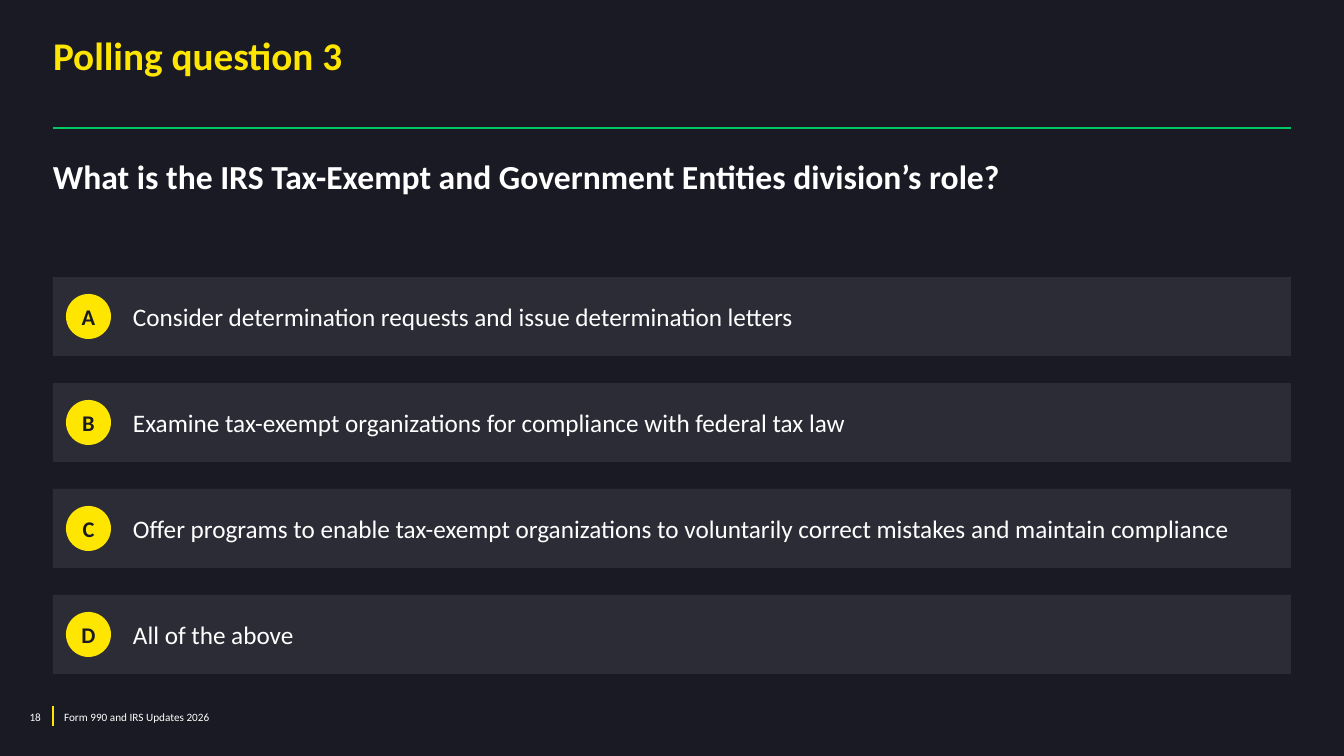
from lxml import etree
from pptx import Presentation
from pptx.dml.color import RGBColor
from pptx.enum.shapes import MSO_CONNECTOR, MSO_SHAPE
from pptx.enum.text import MSO_ANCHOR, PP_ALIGN
from pptx.oxml.ns import qn
from pptx.util import Pt

RECT, OVAL = MSO_SHAPE.RECTANGLE, MSO_SHAPE.OVAL
LINE = MSO_CONNECTOR.STRAIGHT
TOP, MIDDLE = MSO_ANCHOR.TOP, MSO_ANCHOR.MIDDLE
LEFT, CENTER, RIGHT = PP_ALIGN.LEFT, PP_ALIGN.CENTER, PP_ALIGN.RIGHT
PX = 12192000 / 1344
DARK, YELLOW, GREEN, GREY, WHITE = "1A1A24", "FFE600", "00C864", "747480", "FFFFFF"
hue = RGBColor.from_string


def write(shape, text, size=18, color=WHITE, bold=False, align=LEFT,
          anchor=TOP, left=0, right=0, wrap=True, space=1.0):
    frame = shape.text_frame
    frame.word_wrap = wrap
    frame.vertical_anchor = anchor
    frame.margin_left, frame.margin_right = int(left * PX), int(right * PX)
    frame.margin_top = frame.margin_bottom = 0
    para = frame.paragraphs[0]
    para.alignment, para.line_spacing = align, space
    para.space_before = Pt(0)
    run = para.add_run()
    run.text = text
    run.font.name, run.font.size, run.font.bold = "Calibri", Pt(size), bold
    run.font.color.rgb = hue(color)


def box(*area):
    return [int(n * PX) for n in area]


# Slide
deck = Presentation()
deck.slide_width, deck.slide_height = box(1344, 756)
slide = deck.slides.add_slide(deck.slide_layouts[5])
slide.background.fill.solid()
slide.background.fill.fore_color.rgb = hue(DARK)
shapes = slide.shapes

# Title and question
title = shapes.title
title.left, title.top, title.width, title.height = box(53, 38, 1238, 51)
write(title, "Polling question 3", size=28, color=YELLOW, bold=True, space=0.85)
ask = shapes.add_textbox(*box(53, 156, 1238, 40))
write(ask, "What is the IRS Tax-Exempt and Government Entities division’s role?",
      size=24, bold=True)

# Title rule and footer mark
for ends, color, weight in [((53, 128, 1291, 128), GREEN, 2),
                            ((53, 706, 53, 726), YELLOW, 1)]:
    rule = shapes.add_connector(LINE, *box(*ends))
    rule.line.color.rgb, rule.line.width = hue(color), Pt(weight)
    etree.SubElement(rule._element.spPr, qn("a:effectLst"))

# Footer
foot = shapes.add_textbox(*box(54, 710, 605, 13))
write(foot, "Form 990 and IRS Updates 2026", size=8, left=10)
page = shapes.add_textbox(*box(11, 710, 40, 13))
write(page, "18", size=8, align=RIGHT, right=10)

# Answers: a bar with a lettered disc
answers = [
    "Consider determination requests and issue determination letters",
    "Examine tax-exempt organizations for compliance with federal tax law",
    "Offer programs to enable tax-exempt organizations to voluntarily "
    "correct mistakes and maintain compliance",
    "All of the above",
]
for i, (mark, answer) in enumerate(zip("ABCD", answers)):
    y = 277 + 106 * i
    bar = shapes.add_shape(RECT, *box(53, y, 1238, 79))
    disc = shapes.add_shape(OVAL, *box(66, y + 17, 45, 45))
    for part, color in [(bar, GREY), (disc, YELLOW)]:
        part.shadow.inherit = False
        part.fill.solid()
        part.fill.fore_color.rgb = hue(color)
        part.line.fill.background()
    tint = bar._element.spPr.find(qn("a:solidFill"))[0]
    etree.SubElement(tint, qn("a:alpha"), val="20000")
    write(bar, answer, anchor=MIDDLE, left=80)
    write(disc, mark, size=16, color=DARK, bold=True, align=CENTER,
          anchor=MIDDLE, wrap=False)

deck.save("out.pptx")
